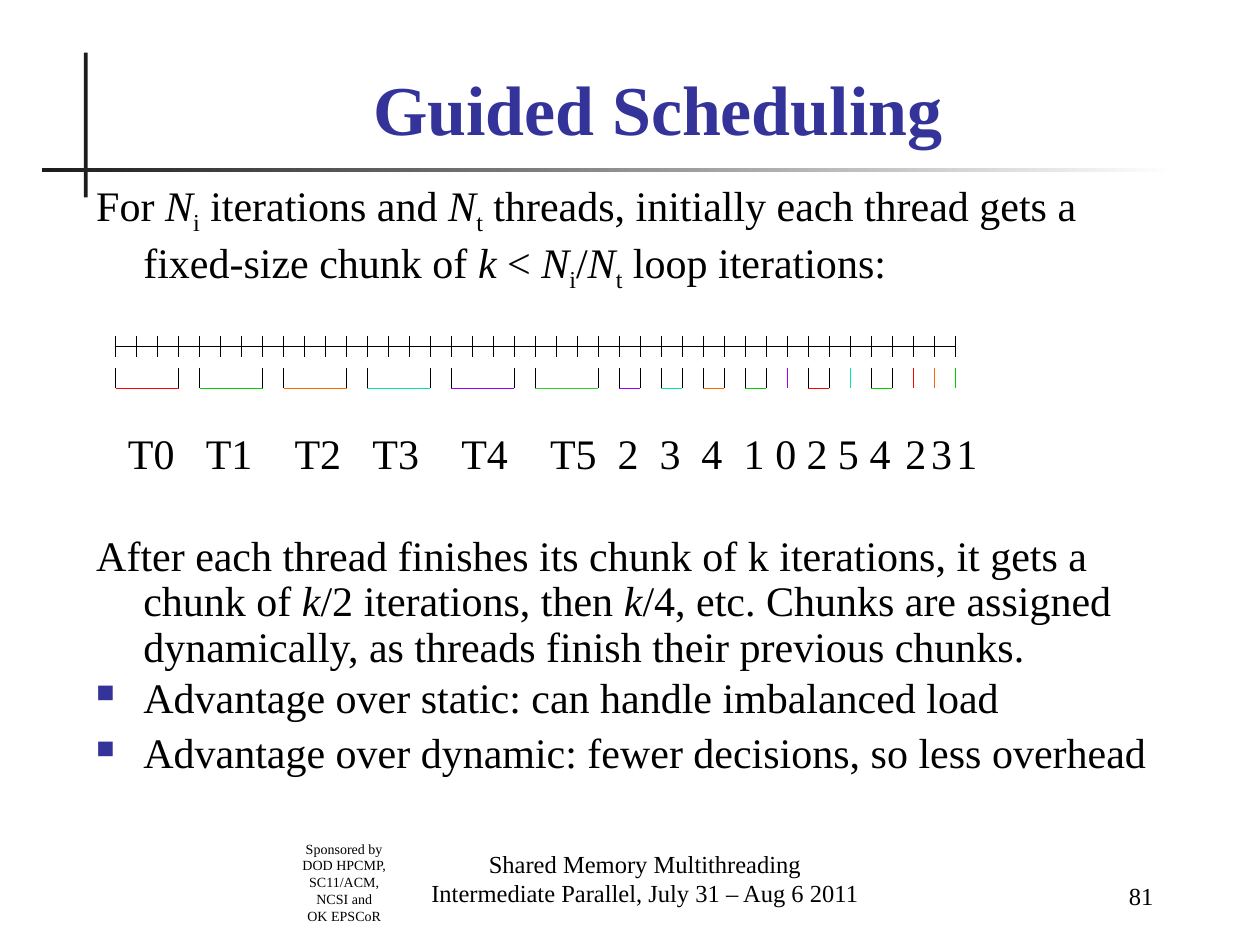
import pptx
import pptx.util
import pptx.dml.color
import pptx.enum.shapes
import pptx.enum.text
import pptx.oxml
import pptx.oxml.ns
from pptx.util import Cm, Pt

ALIGN = pptx.enum.text.PP_ALIGN
ANCHOR = pptx.enum.text.MSO_ANCHOR

THEME = {
    "font": "Times New Roman",
    "ink": "000000", "accent": "333399", "rule": "1C1C1C", "paper": "FFFFFF",
    "red": "FF0000", "green": "00CC00", "orange": "FF6600",
    "teal": "00E4A8", "violet": "9900FF", "lime": "33CC33",
    "title": 40, "body": 24, "footer": 14, "sponsor": 8, "line": 0.75,
}

# Content: spans are (text, style), style being "" plain, "i" italic, "sub" subscript
TITLE = "Guided Scheduling"
INTRO = [("For ", ""), ("N", "i"), ("i", "sub"), (" iterations and ", ""),
         ("N", "i"), ("t", "sub"),
         (" threads, initially each thread gets a fixed-size chunk of ", ""),
         ("k ", "i"), ("< ", ""), ("N", "i"), ("i", "sub"), ("/", ""),
         ("N", "i"), ("t", "sub"), (" loop iterations:", "")]
AFTER = [("After each thread finishes its chunk of k iterations, it gets a chunk of ", ""),
         ("k", "i"), ("/2 iterations, then ", ""), ("k", "i"),
         ("/4, etc. Chunks are assigned dynamically, "
          "as threads finish their previous chunks.", "")]
STATIC = [("Advantage over static: can handle imbalanced load", "")]
DYNAMIC = [("Advantage over dynamic: fewer decisions, so less overhead", "")]
SPONSORS = ["Sponsored by DOD HPCMP, SC11/ACM, NCSI and", "OK EPSCoR"]
FOOTER = ["Shared Memory Multithreading", "Intermediate Parallel, July 31 – Aug 6 2011"]
PAGE_NUMBER = ["81"]

# Chunks in order: thread label, label position in cm, iterations, colour
CHUNKS = [
    ("T0", 0.64, 4, "red"), ("T1", 2.21, 4, "green"), ("T2", 4.0, 4, "orange"),
    ("T3", 5.57, 4, "teal"), ("T4", 7.36, 4, "violet"), ("T5", 9.15, 4, "lime"),
    ("2", 10.51, 2, "violet"), ("3", 11.36, 2, "teal"), ("4", 12.2, 2, "orange"),
    ("1", 13.05, 2, "green"), ("0", 13.69, 1, "violet"), ("2", 14.32, 2, "red"),
    ("5", 14.95, 1, "teal"), ("4", 15.59, 2, "green"), ("2", 16.31, 1, "red"),
    ("3", 16.83, 1, "orange"), ("1", 17.34, 1, "green"),
]
LABELS = [("".join("\t" + label for label, *_ in CHUNKS), "")]

# Body paragraphs: spans, line spacing, space before in points, kind
BODY = [
    (INTRO, 1.0, 0, "hanging"),
    (LABELS, 0.8, 82, "tabs"),
    (AFTER, 0.9, 33, "hanging"),
    (STATIC, 0.8, 5.8, "bullet"),
    (DYNAMIC, 0.9, 5.8, "bullet"),
]


def color(name):
    return pptx.dml.color.RGBColor.from_string(THEME[name])


def set_font(font, size, ink="ink", bold=False):
    font.name = THEME["font"]
    font.size = Pt(THEME[size])
    font.bold = bold
    font.color.rgb = color(ink)


def add_xml(parent, xml):
    namespace = pptx.oxml.ns.nsdecls("a")
    parent.append(pptx.oxml.parse_xml(xml.replace("/>", f" {namespace}/>", 1)
                                      if xml.endswith("/>") and xml.count("<") == 1
                                      else xml.replace(">", f" {namespace}>", 1)))


def add_box(page, left, top, width, height, anchor=ANCHOR.TOP):
    box = page.shapes.add_textbox(Cm(left), Cm(top), Cm(width), Cm(height))
    box.text_frame.word_wrap = True
    box.text_frame.vertical_anchor = anchor
    return box.text_frame


def add_lines(frame, lines, size, align):
    for index, line in enumerate(lines):
        para = frame.paragraphs[0] if index == 0 else frame.add_paragraph()
        para.text = line
        para.alignment = align
        set_font(para.font, size)


def add_rule(page, left, top, width, height):
    rule = page.shapes.add_shape(pptx.enum.shapes.MSO_SHAPE.RECTANGLE,
                                 Cm(left), Cm(top), Cm(width), Cm(height))
    rule.shadow.inherit = False
    rule.line.fill.background()
    return rule.fill


def add_line(page, x1, y1, x2, y2, ink="ink"):
    line = page.shapes.add_connector(pptx.enum.shapes.MSO_CONNECTOR.STRAIGHT,
                                     Cm(x1), Cm(y1), Cm(x2), Cm(y2))
    line.line.color.rgb = color(ink)
    line.line.width = Pt(THEME["line"])
    add_xml(line._element.spPr, "<a:effectLst/>")


def format_paragraph(para, kind):
    properties = para._p.get_or_add_pPr()
    if kind == "tabs":
        stops = "".join(f'<a:tab pos="{Cm(place)}" algn="l"/>' for _, place, *_ in CHUNKS)
        add_xml(properties, f"<a:tabLst>{stops}</a:tabLst>")
        return
    properties.set("marL", str(Cm(0.95)))
    properties.set("indent", str(Cm(-0.95)))
    if kind == "bullet":
        add_xml(properties, f'<a:buClr><a:srgbClr val="{THEME["accent"]}"/></a:buClr>')
        add_xml(properties, '<a:buSzPct val="60000"/>')
        add_xml(properties, '<a:buChar char="■"/>')


def add_body(page):
    frame = add_box(page, 1.69, 3.39, 22.01, 12.9)
    frame.margin_top = Cm(0.22)
    for index, (spans, spacing, before, kind) in enumerate(BODY):
        para = frame.paragraphs[0] if index == 0 else frame.add_paragraph()
        format_paragraph(para, kind)
        para.line_spacing = spacing
        para.space_before = Pt(before)
        set_font(para.font, "body")
        for text, style in spans:
            span = para.add_run()
            span.text = text
            if style == "i":
                span.font.italic = True
            elif style == "sub":
                span._r.get_or_add_rPr().set("baseline", "-25000")


def add_timeline(page):
    left, step = 2.33, 16.93 / 40
    tick_top, tick_bottom, chunk_top, chunk_bottom = 6.77, 7.2, 7.41, 7.83
    count = sum(size for _, _, size, _ in CHUNKS)
    middle = (tick_top + tick_bottom) / 2
    add_line(page, left, middle, left + (count - 1) * step, middle)
    for tick in range(count):
        add_line(page, left + tick * step, tick_top, left + tick * step, tick_bottom)

    # One bracket per chunk; a single iteration is one coloured stroke
    start = left
    for _, _, size, ink in CHUNKS:
        end = start + (size - 1) * step
        if size == 1:
            add_line(page, start, chunk_top, start, chunk_bottom, ink)
        else:
            add_line(page, start, chunk_bottom, end, chunk_bottom, ink)
            for side in (start, end):
                add_line(page, side, chunk_top, side, chunk_bottom)
        start += size * step


def main():
    deck = pptx.Presentation()
    deck.slide_width, deck.slide_height = Cm(25.4), Cm(19.05)
    page = deck.slides.add_slide(deck.slide_layouts[5])

    # Crossed rules beside and below the title
    upright = add_rule(page, 1.69, 1.06, 0.08, 2.92)
    upright.solid()
    upright.fore_color.rgb = color("rule")
    fading = add_rule(page, 0.85, 3.39, 22.86, 0.08)
    fading.gradient()
    fading.gradient_angle = 0
    for stop, ink in zip(fading.gradient_stops, ("rule", "paper")):
        stop.color.rgb = color(ink)

    # Title
    title = page.shapes.title
    title.left, title.top, title.width, title.height = Cm(2.12), Cm(1.27), Cm(22.28), Cm(1.88)
    title.text_frame.text = TITLE
    title.text_frame.auto_size = pptx.enum.text.MSO_AUTO_SIZE.NONE
    title.text_frame.vertical_anchor = ANCHOR.BOTTOM
    heading = title.text_frame.paragraphs[0]
    heading.alignment = ALIGN.CENTER
    set_font(heading.font, "title", "accent", bold=True)

    add_body(page)
    add_timeline(page)

    # Footer
    add_lines(add_box(page, 5.77, 16.81, 2.34, 1.96), SPONSORS, "sponsor", ALIGN.CENTER)
    add_lines(add_box(page, 7.82, 17.15, 10.37, 1.27, ANCHOR.BOTTOM),
              FOOTER, "footer", ALIGN.CENTER)
    add_lines(add_box(page, 19.9, 17.2, 3.6, 1.27, ANCHOR.BOTTOM),
              PAGE_NUMBER, "footer", ALIGN.RIGHT)

    deck.save("out.pptx")


if __name__ == "__main__":
    main()
